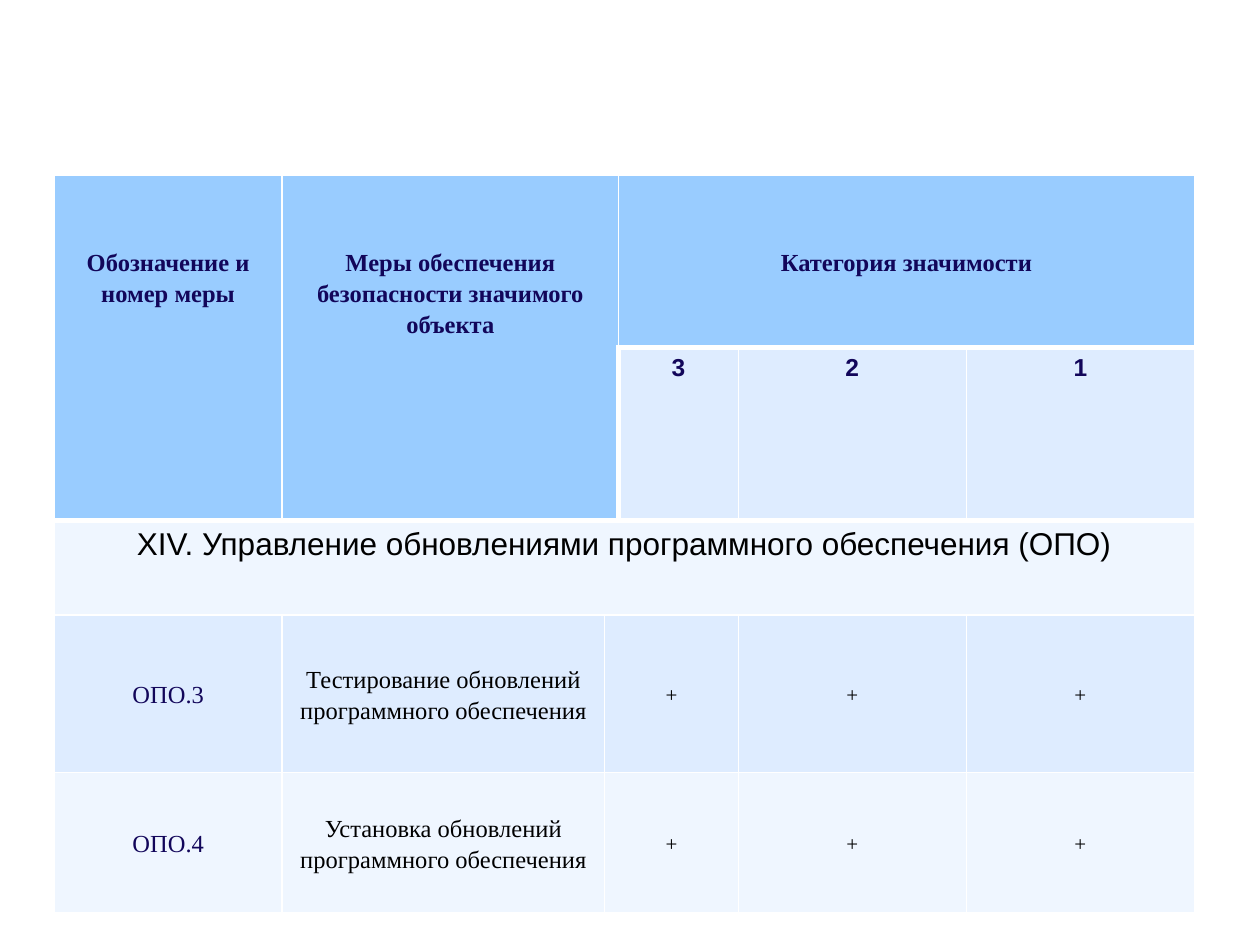
from lxml import etree
from pptx import Presentation
from pptx import util as u
from pptx.dml.color import RGBColor
from pptx.enum import text
from pptx.oxml.ns import qn

NAVY, BLACK, WHITE = "12065A", "000000", "FFFFFF"
HEADER, BAND, PALE = "99CCFF", "DEECFF", "EFF6FF"
COLUMNS = [1.81, 2.56, 0.11, 0.95, 1.81, 1.81]
ROWS = [1.37, 0.55, 0.75, 1.25, 1.11]
HEADINGS = [
    (0, "Обозначение и номер меры", 2, 1),
    (1, "Меры обеспечения безопасности значимого объекта", 2, 2),
    (3, "Категория значимости", 1, 3),
]
CATEGORIES = [(3, "3"), (4, "2"), (5, "1")]
SECTION = "XIV. Управление обновлениями программного обеспечения (ОПО)"
MEASURES = [
    ("ОПО.3", "Тестирование обновлений программного обеспечения", BAND),
    ("ОПО.4", "Установка обновлений программного обеспечения", PALE),
]
MARKS = [(2, 2), (4, 1), (5, 1)]


def rgb(value):
    """Turn a hex string into a colour."""
    return RGBColor.from_string(value)


def set_borders(cell, heavy=""):
    """Draw white cell borders, thick on the sides named in heavy."""
    properties = cell._tc.get_or_add_tcPr()
    for side in "LRTB":
        width = u.Pt(3 if side in heavy else 1)
        line = etree.SubElement(properties, qn(f"a:ln{side}"), w=str(width))
        fill = etree.SubElement(line, qn("a:solidFill"))
        etree.SubElement(fill, qn("a:srgbClr"), val=WHITE)


def write(cell, content, fill, size=14, color=NAVY, bold=False,
          font="Times New Roman", heavy="", span=(1, 1), top=0.07):
    """Fill, merge and format one table cell."""
    table_part = cell
    if span != (1, 1):
        row, column = table_part._tc.row_idx, table_part._tc.col_idx
        cell.merge(table.cell(row + span[0] - 1, column + span[1] - 1))
    set_borders(cell, heavy)
    cell.fill.solid()
    cell.fill.fore_color.rgb = rgb(fill)
    cell.text = content
    paragraph = cell.text_frame.paragraphs[0]
    paragraph.alignment = text.PP_ALIGN.CENTER
    paragraph.font.name = font
    paragraph.font.size = u.Pt(size)
    paragraph.font.bold = bold
    paragraph.font.color.rgb = rgb(color)
    if font != "Arial":
        paragraph.line_spacing = 1.15
        cell.margin_left = cell.margin_right = u.Inches(0.04)
        cell.margin_top, cell.margin_bottom = u.Inches(top), u.Inches(0.07)


presentation = Presentation()
presentation.slide_width, presentation.slide_height = u.Inches(10), u.Inches(7.5)
slide = presentation.slides.add_slide(presentation.slide_layouts[6])
table = slide.shapes.add_table(
    len(ROWS), len(COLUMNS), u.Inches(0.43), u.Inches(1.39),
    u.Inches(sum(COLUMNS)), u.Inches(sum(ROWS))).table
for column, width in zip(table.columns, COLUMNS):
    column.width = u.Inches(width)
for row, height in zip(table.rows, ROWS):
    row.height = u.Inches(height)

for column, heading, *span in HEADINGS:
    write(table.cell(0, column), heading, HEADER, bold=True, heavy="B",
          span=tuple(span), top=0.56)
for column, category in CATEGORIES:
    write(table.cell(1, column), category, BAND, bold=True, font="Arial",
          heavy="LT" if column == 3 else "T")
write(table.cell(2, 0), SECTION, PALE, size=18, color=BLACK, font="Arial",
      heavy="T", span=(1, len(COLUMNS)))
for row, (code, measure, fill) in enumerate(MEASURES, start=3):
    write(table.cell(row, 0), code, fill)
    write(table.cell(row, 1), measure, fill, color=BLACK)
    for column, width in MARKS:
        write(table.cell(row, column), "+", fill, size=12, color=BLACK, span=(1, width))
    for cell in table.rows[row].cells:
        cell.vertical_anchor = text.MSO_ANCHOR.MIDDLE

presentation.save("out.pptx")
